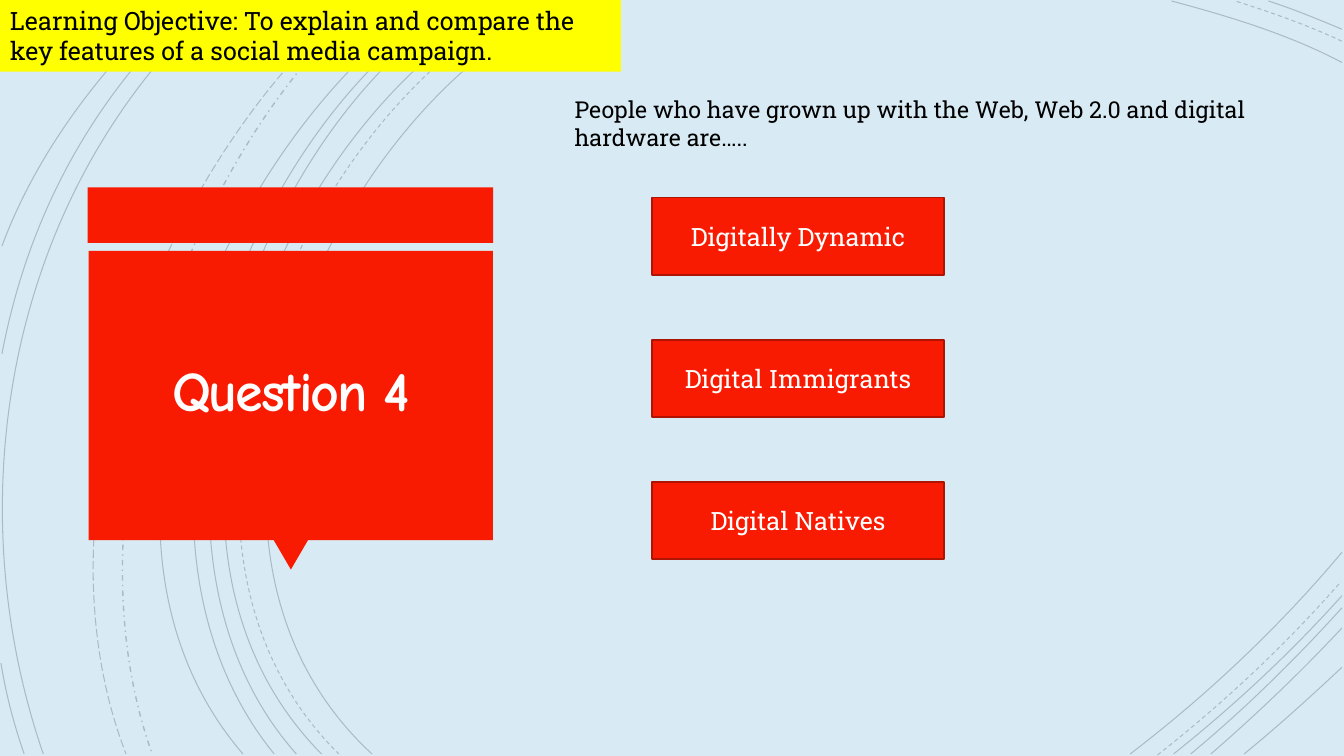
from pptx import Presentation
from pptx.dml.color import RGBColor
from pptx.enum.dml import MSO_LINE
from pptx.enum.shapes import MSO_SHAPE
from pptx.enum.text import MSO_ANCHOR, PP_ALIGN
from pptx.oxml.ns import qn
from pptx.util import Cm, Pt
from lxml import etree

RECTANGLE, TRIANGLE = MSO_SHAPE.RECTANGLE, MSO_SHAPE.ISOSCELES_TRIANGLE
LEFT, CENTER = PP_ALIGN.LEFT, PP_ALIGN.CENTER
TOP, MIDDLE = MSO_ANCHOR.TOP, MSO_ANCHOR.MIDDLE
SOLID, DASH = MSO_LINE.SOLID, MSO_LINE.DASH
DASH_DOT, LONG_DASH = MSO_LINE.DASH_DOT, MSO_LINE.LONG_DASH

PALE_BLUE = RGBColor(0xD8, 0xEA, 0xF3)
RED = RGBColor(0xF8, 0x1B, 0x02)
DARK_RED = RGBColor(0xAF, 0x13, 0x01)
YELLOW = RGBColor(0xFF, 0xFF, 0x00)
BLACK = RGBColor(0x00, 0x00, 0x00)
WHITE = RGBColor(0xFF, 0xFF, 0xFF)
OFF_WHITE = RGBColor(0xFF, 0xFE, 0xFF)

BODY_FONT, TITLE_FONT = "Roboto Slab", "Comic Neue"

# Each arc: start, two control points and end, in inches, then its dash
ARCS = [
    ((5.65, 0), (3.15, 1.15), (1.43, 5.4), (3.69, 7.48), SOLID),
    ((13.31, 0.62), (12.78, 0.34), (12.18, 0.16), (11.62, 0.01), SOLID),
    ((11.21, 7.48), (11.97, 6.9), (12.69, 6.22), (13.31, 5.48), SOLID),
    ((5.25, 0), (2.85, 1.25), (1.23, 5.37), (3.36, 7.48), DASH),
    ((13.31, 0.41), (12.97, 0.25), (12.6, 0.12), (12.25, 0.01), DASH),
    ((11.48, 7.49), (12.13, 6.98), (12.75, 6.4), (13.3, 5.77), DASH),
    ((5.06, 0), (2.7, 1.27), (1.1, 5.37), (3.19, 7.48), SOLID),
    ((13.31, 0.29), (13.07, 0.19), (12.83, 0.09), (12.58, 0.01), SOLID),
    ((11.64, 7.48), (12.23, 7.01), (12.8, 6.48), (13.31, 5.91), SOLID),
    ((4.64, 0), (2.44, 1.33), (1.1, 5.41), (2.94, 7.48), SOLID),
    ((11.81, 7.48), (12.34, 7.04), (12.84, 6.55), (13.31, 6.03), SOLID),
    ((4.51, 0), (2.31, 1.38), (0.97, 5.33), (2.72, 7.48), SOLID),
    ((12.01, 7.48), (12.46, 7.09), (12.9, 6.67), (13.31, 6.23), SOLID),
    ((4.27, 0), (2.17, 1.47), (0.53, 5.29), (2.41, 7.48), SOLID),
    ((12.34, 7.48), (12.67, 7.21), (12.99, 6.92), (13.31, 6.62), SOLID),
    ((3.63, 0), (1.76, 1.66), (0.65, 5.09), (1.51, 7.48), DASH_DOT),
    ((3.51, 0), (1.57, 1.69), (0.29, 4.99), (1.25, 7.48), LONG_DASH),
    ((2.17, 0), (0.11, 1.85), (-0.46, 4.9), (0.43, 7.48), SOLID),
    ((1.95, 0.01), (0.92, 0.96), (0.28, 2.14), (0.02, 3.51), SOLID),
    ((0.01, 6.58), (0.06, 6.89), (0.14, 7.19), (0.24, 7.48), SOLID),
    ((1.72, 0), (1, 0.69), (0.37, 1.5), (0.02, 2.44), SOLID),
]
ANSWERS = ["Digitally Dynamic", "Digital Immigrants", "Digital Natives"]


def length(inches):
    return Cm(inches * 2.54)


def write(box, text, size=18, font=BODY_FONT, color=BLACK, bold=False, align=LEFT,
          anchor=MIDDLE, line_spacing=None, space_before=0, tracking=None, inset=None):
    frame = box.text_frame
    frame.word_wrap = True
    frame.vertical_anchor = anchor
    if inset is not None:
        frame.margin_left = frame.margin_right = length(inset)
        frame.margin_top = frame.margin_bottom = length(inset)
    para = frame.paragraphs[0]
    para.alignment = align
    para.space_before = Pt(space_before)
    if line_spacing:
        para.line_spacing = line_spacing
    span = para.add_run()
    span.text = text
    span.font.name, span.font.size, span.font.bold = font, Pt(size), bold
    span.font.color.rgb = color
    if tracking:
        span.font._element.set("spc", str(int(tracking * 100)))


class Page:
    """Style and drawing methods for the current slide."""

    arc_color, arc_opacity = BLACK, 20

    def __init__(self, deck):
        self.slide = deck.slides.add_slide(deck.slide_layouts[6])
        self.shapes = self.slide.shapes
        self.slide.background.fill.solid()
        self.slide.background.fill.fore_color.rgb = PALE_BLUE

    def arc(self, *points, dash):
        start, *others = [tuple(map(length, point)) for point in points]
        builder = self.shapes.build_freeform(*start)
        builder.add_line_segments(others, close=False)
        curve = builder.convert_to_shape()
        # Join the three segments into one cubic curve
        outline = curve._element.find(".//" + qn("a:path"))
        bend = etree.SubElement(outline, qn("a:cubicBezTo"))
        for segment in outline.findall(qn("a:lnTo")):
            bend.append(segment[0])
            outline.remove(segment)
        curve.shadow.inherit = False
        curve.fill.background()
        curve.line.color.rgb = self.arc_color
        curve.line.width = Pt(1 if dash == DASH_DOT else 0.75)
        curve.line.dash_style = dash
        tint = curve._element.find(".//" + qn("a:ln")).find(".//" + qn("a:srgbClr"))
        etree.SubElement(tint, qn("a:alpha"), val=str(self.arc_opacity * 1000))

    def block(self, left, top, width, height, fill=RED, line=None, kind=RECTANGLE):
        box = self.shapes.add_shape(kind, *map(length, (left, top, width, height)))
        box.shadow.inherit = False
        box.fill.solid()
        box.fill.fore_color.rgb = fill
        if line:
            box.line.color.rgb = line
            box.line.width = Pt(1.25)
        else:
            box.line.fill.background()
        return box

    def text(self, left, top, width, height, text, **style):
        box = self.shapes.add_textbox(*map(length, (left, top, width, height)))
        write(box, text, **style)


def main():
    deck = Presentation()
    deck.slide_width, deck.slide_height = length(13.33), length(7.5)
    page = Page(deck)

    # Background arcs
    for *points, dash in ARCS:
        page.arc(*points, dash=dash)

    # Title panel with its pointer
    page.block(0.87, 1.86, 4.02, 0.55)
    pointer = page.block(2.71, 5.35, 0.35, 0.3, kind=TRIANGLE)
    pointer.rotation = 180
    page.block(0.88, 2.49, 4.01, 2.87)
    page.text(0.97, 2.57, 3.83, 2.69, "Question 4", size=40, font=TITLE_FONT,
              color=OFF_WHITE, bold=True, align=CENTER, line_spacing=0.85,
              tracking=-1.5, inset=0.25)

    # Question and answers
    page.text(5.6, 0.88, 6.87, 0.68,
              "People who have grown up with the Web, Web 2.0 and digital hardware are…..",
              size=16.65, space_before=10)
    for row, answer in enumerate(ANSWERS):
        button = page.block(6.47, 1.96 + 1.41 * row, 2.89, 0.77, line=DARK_RED)
        write(button, answer, color=WHITE, align=CENTER)

    # Learning objective banner
    banner = page.block(0, 0, 6.16, 0.71, fill=YELLOW)
    write(banner, "Learning Objective: To explain and compare the key features "
                  "of a social media campaign.", anchor=TOP)

    deck.save("out.pptx")


if __name__ == "__main__":
    main()
